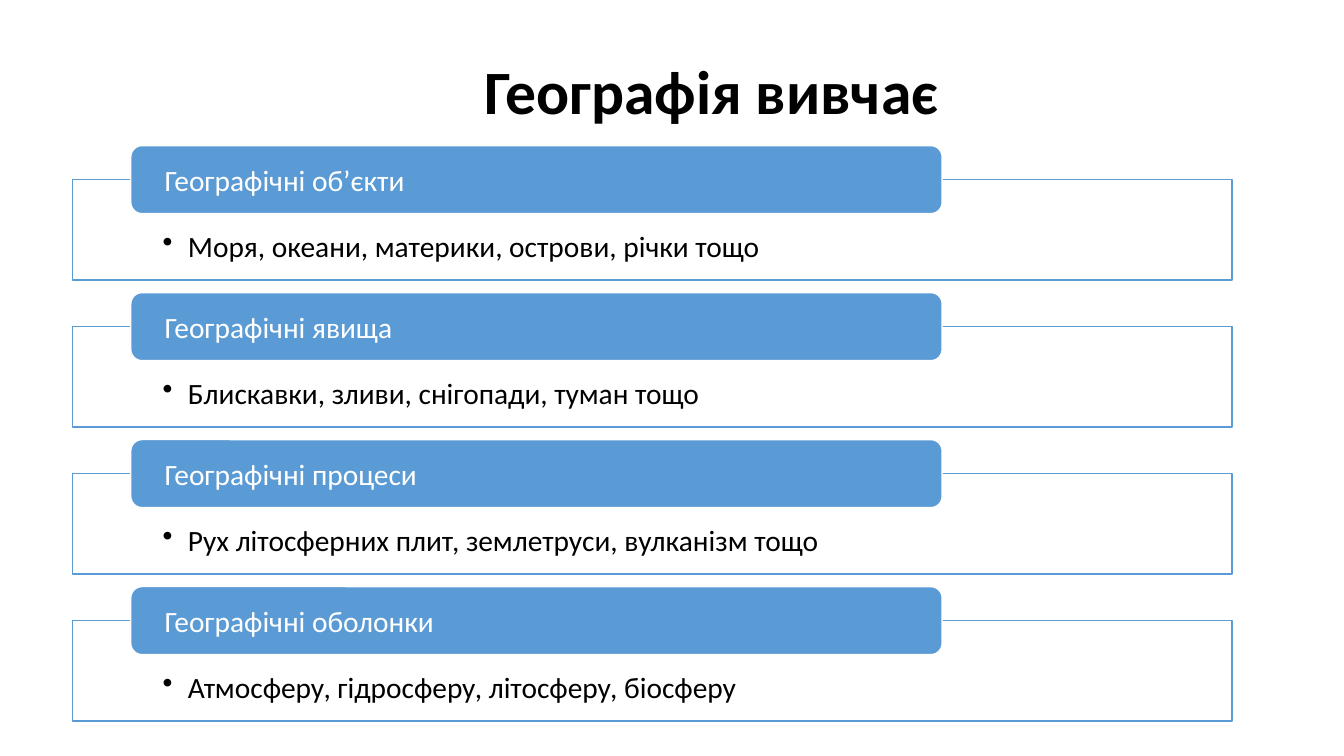
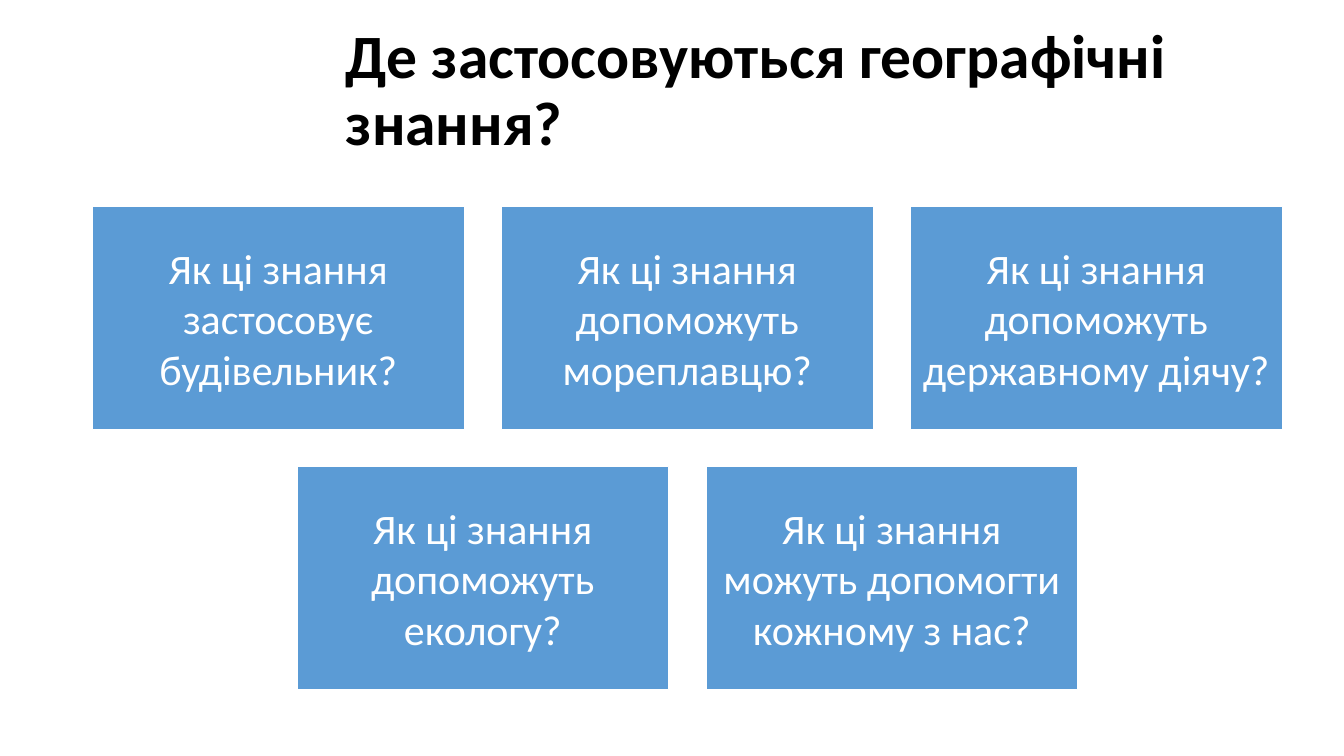
"""Build two slides on what geography studies and where it is used."""
import pptx
import pptx.dml.color
import pptx.enum.shapes
import pptx.enum.text
import pptx.oxml.ns
import pptx.util
import lxml.etree

Pt = pptx.util.Pt
KIND = pptx.enum.shapes.MSO_SHAPE
ALIGN = pptx.enum.text.PP_ALIGN
ANCHOR = pptx.enum.text.MSO_ANCHOR
FONT = "Calibri"
COLORS = {"blue": "5B9BD5", "white": "FFFFFF", "black": "000000"}
TOPICS = [
    ("Географічні об’єкти", "Моря, океани, материки, острови, річки тощо"),
    ("Географічні явища", "Блискавки, зливи, снігопади, туман тощо"),
    ("Географічні процеси", "Рух літосферних плит, землетруси, вулканізм тощо"),
    ("Географічні оболонки", "Атмосферу, гідросферу, літосферу, біосферу"),
]
ROWS = [
    ["Як ці знання застосовує будівельник?",
     "Як ці знання допоможуть мореплавцю?",
     "Як ці знання допоможуть державному діячу?"],
    ["Як ці знання допоможуть екологу?",
     "Як ці знання можуть допомогти кожному з нас?"],
]


def color(name):
    return pptx.dml.color.RGBColor.from_string(COLORS[name])


def write(shape, text, size=21, ink="white", bold=False, align=ALIGN.LEFT,
          anchor=ANCHOR.MIDDLE, inset=(7.2, 3.6, 7.2, 3.6), space=None,
          bullet=False):
    frame = shape.text_frame
    frame.word_wrap = True
    frame.auto_size = pptx.enum.text.MSO_AUTO_SIZE.NONE
    frame.vertical_anchor = anchor
    (frame.margin_left, frame.margin_top,
     frame.margin_right, frame.margin_bottom) = map(Pt, inset)
    para = frame.paragraphs[0]
    para.alignment = align
    if space:
        para.line_spacing = space
    if bullet:
        props = para._p.get_or_add_pPr()
        props.set("marL", str(Pt(18)))
        props.set("indent", str(Pt(-18)))
        mark = lxml.etree.SubElement(props, pptx.oxml.ns.qn("a:buChar"))
        mark.set("char", "•")
    run = para.add_run()
    run.text = text
    run.font.name = FONT
    run.font.size = Pt(size)
    run.font.bold = bold
    run.font.color.rgb = color(ink)


def block(slide, kind, box, fill, line):
    shape = slide.shapes.add_shape(kind, *map(Pt, box))
    shape.shadow.inherit = False
    shape.fill.solid()
    shape.fill.fore_color.rgb = color(fill)
    shape.line.color.rgb = color(line)
    shape.line.width = Pt(1)
    return shape


def start(deck, text, box, align):
    slide = deck.slides.add_slide(deck.slide_layouts[5])
    title = slide.shapes.title
    title.left, title.top, title.width, title.height = map(Pt, box)
    write(title, text, size=44, ink="black", bold=True, align=align, space=0.9)
    return slide


def topic(slide, box, head, text):
    left, top, width, height = box
    tab = 48.6
    panel = block(slide, KIND.RECTANGLE,
                  (left, top + tab / 2, width, height - tab / 2),
                  "white", "blue")
    write(panel, text, ink="black", anchor=ANCHOR.TOP,
          inset=(64.25, 34.4, 64.25, 11.5), bullet=True)
    label = block(slide, KIND.ROUNDED_RECTANGLE,
                  (left + width * 0.05, top, width * 0.7, tab),
                  "blue", "white")
    write(label, head, inset=(21.9, 0, 21.9, 0))


def topics(slide, box):
    left, top, width, height = box
    gap = 9
    step = (height + gap) / len(TOPICS)
    for i, (head, text) in enumerate(TOPICS):
        topic(slide, (left, top + i * step, width, step - gap), head, text)


def cards(slide, box):
    left, top, width, height = box
    gap = 26.5
    wide = (width - 2 * gap) / 3
    high = (height - gap) / 2
    for i, row in enumerate(ROWS):
        span = len(row) * (wide + gap) - gap
        edge = left + (width - span) / 2
        for j, text in enumerate(row):
            card = block(slide, KIND.RECTANGLE,
                         (edge + j * (wide + gap), top + i * (high + gap),
                          wide, high), "blue", "white")
            write(card, text, size=30, align=ALIGN.CENTER, inset=(8.6,) * 4)


def main():
    deck = pptx.Presentation()
    deck.slide_width, deck.slide_height = Pt(960), Pt(540)
    slide = start(deck, "Географія вивчає", (329.8, 15, 357, 104.4),
                  ALIGN.CENTER)
    topics(slide, (52, 104, 828, 411))
    slide = start(deck, "Де застосовуються географічні знання?",
                  (239.8, 13.5, 705, 104.4), ALIGN.LEFT)
    cards(slide, (66, 147.5, 850, 345))
    deck.save("out.pptx")


if __name__ == "__main__":
    main()
